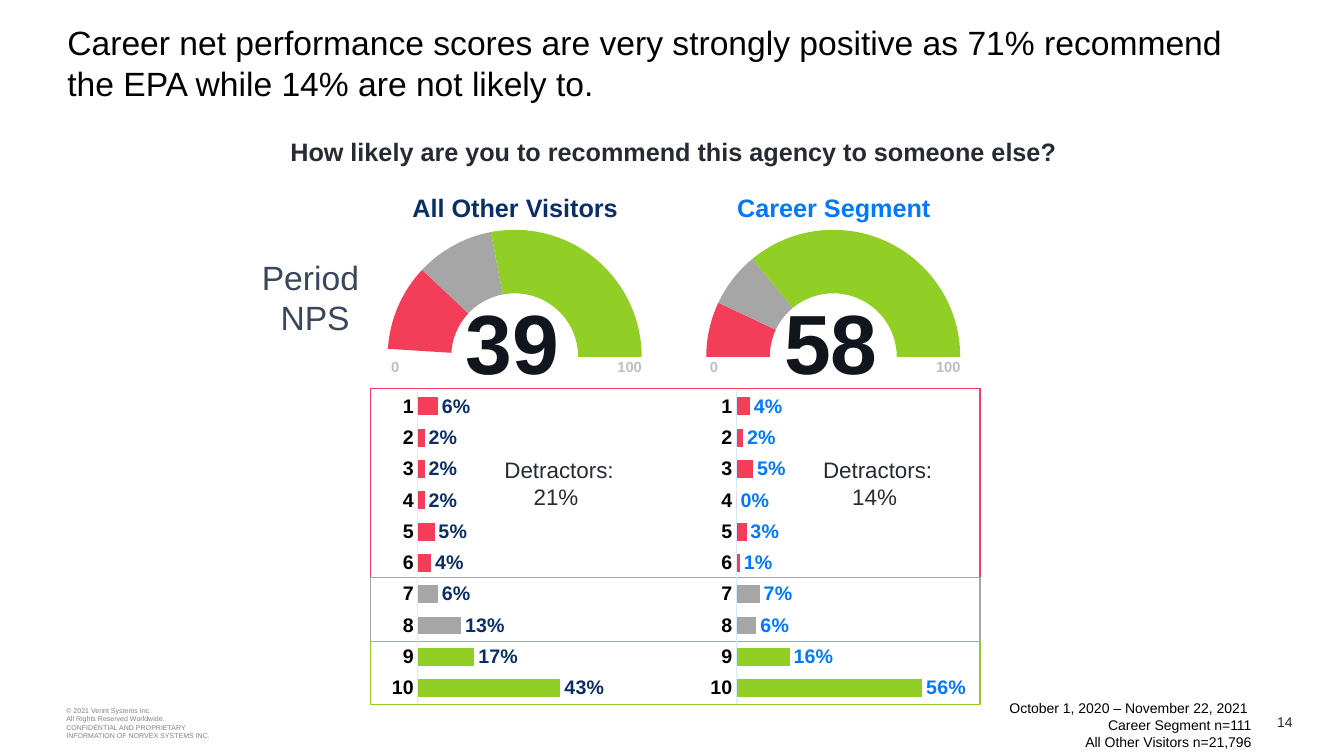
from dataclasses import dataclass
from lxml.etree import SubElement
from pptx import Presentation
from pptx.chart.data import CategoryChartData
from pptx.dml.color import RGBColor
from pptx.enum.chart import XL_CHART_TYPE as ChartType, XL_LABEL_POSITION as LabelPosition
from pptx.enum.chart import XL_TICK_LABEL_POSITION as TickLabels, XL_TICK_MARK as TickMark
from pptx.enum.shapes import MSO_SHAPE as Preset
from pptx.enum.text import MSO_ANCHOR as Anchor, PP_ALIGN as Align
from pptx.oxml import parse_xml
from pptx.oxml.ns import nsdecls, qn
from pptx.util import Inches, Pt

ROWS = 75
CELL = Inches(7.5) / ROWS


@dataclass(frozen=True)
class Theme:
    font: str = "Arial"
    black: str = "000000"
    ink: str = "262A32"
    slate: str = "3A475B"
    score: str = "11161E"
    navy: str = "0A2E65"
    blue: str = "0079FF"
    axis: str = "D9EBFF"
    faint: str = "BFBFBF"
    legal: str = "808080"
    detractor: str = "F43D58"
    passive: str = "A6A6A6"
    promoter: str = "92CF26"
    score_size: float = 60
    title_size: float = 24
    heading_size: float = 18
    note_size: float = 16
    label_size: float = 14
    scale_size: float = 10.5
    footer_size: float = 10
    legal_size: float = 5


THEME = Theme()
RATING_COLOURS = [THEME.detractor] * 6 + [THEME.passive] * 2 + [THEME.promoter] * 2


@dataclass(frozen=True)
class Box:
    left: float
    top: float
    width: float
    height: float

    def inside(self, across, down, width, height):
        return Box(self.left + across, self.top + down, width, height)

    def emu(self):
        return [round(cells * CELL) for cells in (self.left, self.top, self.width, self.height)]


def style_font(font, size, colour, bold=False):
    font.name = THEME.font
    font.size = Pt(size)
    font.bold = bold
    font.color.rgb = RGBColor.from_string(colour)


def write(slide, box, lines, size, colour, bold=False, align=Align.CENTER,
          anchor=Anchor.TOP, tight=False):
    frame = slide.shapes.add_textbox(*box.emu()).text_frame
    frame.word_wrap = not tight
    frame.vertical_anchor = anchor
    if tight:
        frame.margin_left = frame.margin_right = frame.margin_top = frame.margin_bottom = 0
    for index, line in enumerate(lines):
        paragraph = frame.add_paragraph() if index else frame.paragraphs[0]
        paragraph.alignment = align
        run = paragraph.add_run()
        run.text = line
        style_font(run.font, size, colour, bold)


def add_plain_chart(slide, box, kind, values, number_format, layout):
    chart_data = CategoryChartData(number_format=number_format)
    chart_data.categories = [str(number + 1) for number in range(len(values))]
    chart_data.add_series("Series 1", values)
    chart = slide.shapes.add_chart(kind, *box.emu(), chart_data).chart
    chart.has_legend = False
    chart.has_title = False
    style_font(chart.font, THEME.footer_size, THEME.blue)
    space = chart.element
    space.find(qn("c:chart")).addnext(parse_xml(
        f'<c:spPr {nsdecls("c", "a")}><a:noFill/><a:ln><a:noFill/></a:ln></c:spPr>'))
    plot_area = space.find(qn("c:chart")).find(qn("c:plotArea"))
    for previous in plot_area.findall(qn("c:layout")):
        plot_area.remove(previous)
    placement = parse_xml(f'<c:layout {nsdecls("c")}><c:manualLayout/></c:layout>')
    settings = [("layoutTarget", "inner"), ("xMode", "edge"), ("yMode", "edge")]
    for tag, setting in settings + list(zip("xywh", layout)):
        SubElement(placement[0], qn(f"c:{tag}")).set("val", str(setting))
    plot_area.insert(0, placement)
    return chart


def paint_points(series, colours):
    for index, colour in enumerate(colours):
        look = series.points[index].format
        look.line.fill.background()
        if colour:
            look.fill.solid()
            look.fill.fore_color.rgb = RGBColor.from_string(colour)
        else:
            look.fill.background()


def rating_bars(slide, box, percents, colour):
    chart = add_plain_chart(slide, box, ChartType.BAR_CLUSTERED,
                            [percent / 100 for percent in percents], "0%",
                            (0.15, 0.06, 0.85, 0.9))
    ratings, shares = chart.category_axis, chart.value_axis
    ratings.reverse_order = True
    ratings.major_tick_mark = TickMark.NONE
    ratings.format.line.color.rgb = RGBColor.from_string(THEME.axis)
    ratings.format.line.width = Pt(0.75)
    style_font(ratings.tick_labels.font, THEME.label_size, THEME.black, True)
    shares.minimum_scale, shares.maximum_scale = 0, 1
    shares.has_major_gridlines = False
    shares.tick_label_position = TickLabels.NONE
    shares.format.line.fill.background()
    plot = chart.plots[0]
    plot.gap_width = 75
    plot.vary_by_categories = False
    plot.has_data_labels = True
    labels = plot.data_labels
    labels.show_value = True
    labels.number_format, labels.number_format_is_linked = "0%", False
    labels.position = LabelPosition.OUTSIDE_END
    style_font(labels.font, THEME.label_size, colour, True)
    paint_points(plot.series[0], RATING_COLOURS)


def gauge(slide, box, slices, score):
    chart = add_plain_chart(slide, box, ChartType.DOUGHNUT, slices, "General",
                            (0.07, 0.05, 0.87, 0.9))
    plot = chart.plots[0]
    plot.vary_by_categories = False
    ring = chart.element.xpath(".//c:doughnutChart")[0]
    ring.find(qn("c:firstSliceAng")).set("val", "90")
    ring.find(qn("c:holeSize")).set("val", "76")
    paint_points(plot.series[0], [None, THEME.detractor, THEME.passive, THEME.promoter])
    write(slide, box.inside(9.7, 7.4, 9.4, 10.1), [score], THEME.score_size,
          THEME.score, True, tight=True)
    for across, width, mark in ((2.4, 0.8, "0"), (24.8, 2.5, "100")):
        write(slide, box.inside(across, 14.1, width, 1.6), [mark], THEME.scale_size,
              THEME.faint, True, tight=True)


def segment_column(slide, box, name, colour, percents, slices, score, detractors):
    rating_bars(slide, box.inside(-0.75, 18.1, 38.7, 34.5), percents, colour)
    gauge(slide, box.inside(0, 2.8, 29, 28), slices, score)
    write(slide, box.inside(2.4, 0, 24.6, 4), [name], THEME.heading_size, colour, True)
    write(slide, box.inside(11.85, 26.2, 14.4, 6.4), ["Detractors:", detractors],
          THEME.note_size, THEME.ink)


def rating_bands(slide, box):
    row, down = box.height / 10, 0
    for ratings, colour in ((6, THEME.detractor), (2, THEME.passive), (2, THEME.promoter)):
        area = box.inside(0, down, box.width, ratings * row)
        band = slide.shapes.add_shape(Preset.RECTANGLE, *area.emu())
        band.shadow.inherit = False
        band.fill.background()
        band.line.color.rgb = RGBColor.from_string(colour)
        band.line.width = Pt(0.75)
        down += ratings * row


def header(slide, box):
    write(slide, box.inside(0, 0, 122, 9),
          ["Career net performance scores are very strongly positive as 71% recommend "
           "the EPA while 14% are not likely to."],
          THEME.title_size, THEME.black, align=Align.LEFT, anchor=Anchor.MIDDLE)
    write(slide, box.inside(20.1, 11.3, 82, 4),
          ["How likely are you to recommend this agency to someone else?"],
          THEME.heading_size, THEME.ink, True)


def footer(slide, box):
    write(slide, box.inside(0, 0, 24, 4.7),
          ["© 2021 Verint Systems Inc.", "All Rights Reserved Worldwide.",
           "CONFIDENTIAL AND PROPRIETARY", "INFORMATION OF NORVEX SYSTEMS INC."],
          THEME.legal_size, THEME.legal, align=Align.LEFT, anchor=Anchor.MIDDLE)
    write(slide, box.inside(59.5, 0.2, 60, 4.7),
          ["October 1, 2020 – November 22, 2021 ", "Career Segment n=111",
           "All Other Visitors n=21,796"],
          THEME.footer_size, THEME.black, align=Align.RIGHT, anchor=Anchor.MIDDLE)
    write(slide, box.inside(112.5, -0.1, 11.1, 4.7), ["14"], THEME.footer_size,
          THEME.ink, align=Align.RIGHT, anchor=Anchor.MIDDLE)


def main():
    deck = Presentation()
    deck.slide_width, deck.slide_height = Inches(13.33), Inches(7.5)
    slide = deck.slides.add_slide(deck.slide_layouts[6])
    header(slide, Box(5.7, 1.7, 122, 14))
    write(slide, Box(24.9, 25, 12.7, 9.1), ["Period ", "NPS"], THEME.title_size, THEME.slate)
    rating_bands(slide, Box(36.7, 38.5, 60.5, 31.4))
    segment_column(slide, Box(36.4, 18.6, 31.6, 52.6), "All Other Visitors", THEME.navy,
                   (6, 2, 2, 2, 5, 4, 6, 13, 17, 43), (51, 11, 10, 28), "39", "21% ")
    segment_column(slide, Box(68, 18.6, 31.6, 52.6), "Career Segment", THEME.blue,
                   (4, 2, 5, 0, 3, 1, 7, 6, 16, 56), (50, 7, 7, 36), "58", "14% ")
    footer(slide, Box(5.6, 69.4, 124, 4.7))
    deck.save("out.pptx")


if __name__ == "__main__":
    main()
